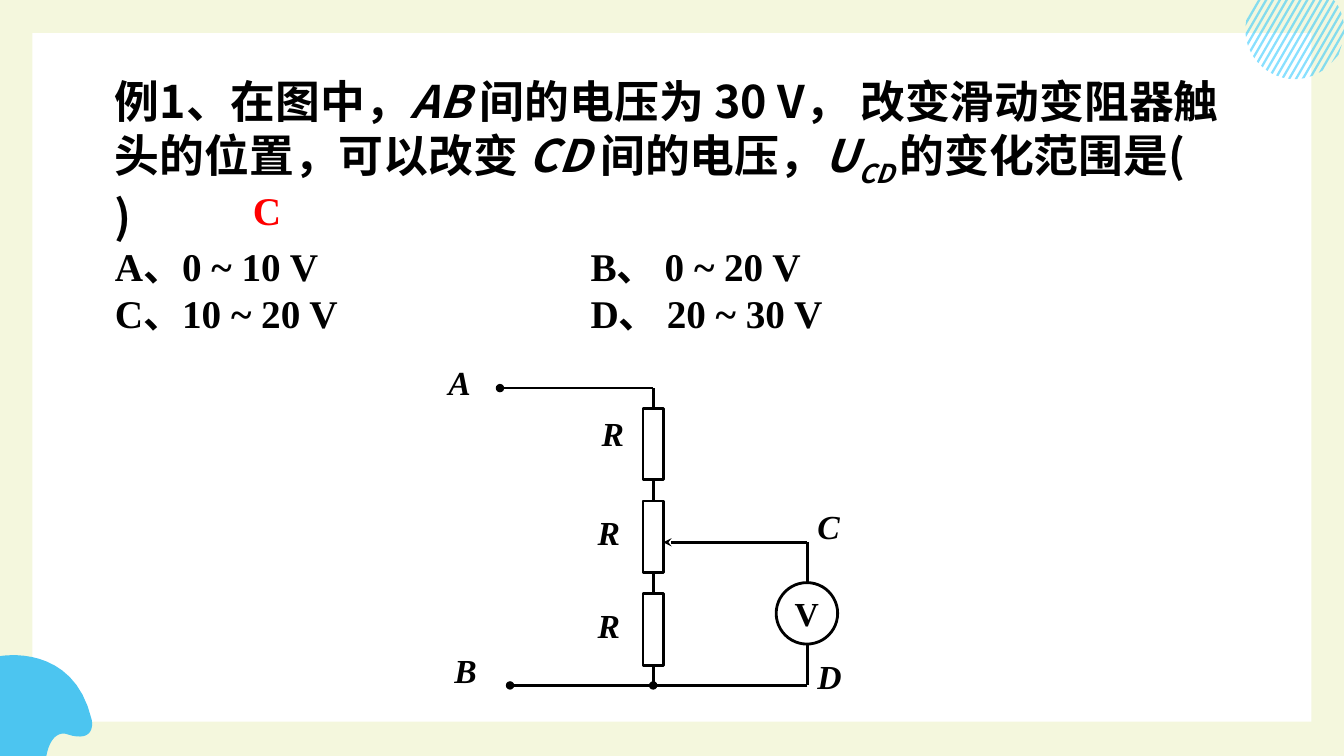
import math

import lxml.etree
import pptx
import pptx.dml.color
import pptx.enum.shapes
import pptx.enum.text
import pptx.oxml
import pptx.oxml.ns
import pptx.util

CREAM = pptx.dml.color.RGBColor(0xF4, 0xF7, 0xDD)
WHITE = pptx.dml.color.RGBColor(0xFF, 0xFF, 0xFF)
BLACK = pptx.dml.color.RGBColor(0x00, 0x00, 0x00)
RED = pptx.dml.color.RGBColor(0xFF, 0x00, 0x00)
SKY = pptx.dml.color.RGBColor(0x4C, 0xC5, 0xF0)
STRIPE_BLUE = pptx.dml.color.RGBColor(0x15, 0xC2, 0xFF)

CHINESE_FONT = "Noto Sans CJK SC"
LATIN_FONT = "Times New Roman"
CELL = pptx.util.Inches(0.1)
COLUMNS, ROWS = 133.33, 75
LINE_WIDTH = pptx.util.Pt(2)
SHAPE = pptx.enum.shapes.MSO_SHAPE

QUESTION = [
    ("例1、在图中，", ""), ("AB ", "italic"),
    ("间的电压为 30 V， 改变滑动变阻器触头的位置，可以改变 ", ""), ("CD ", "italic"),
    ("间的电压，", ""), ("U", "italic"), ("CD ", "subscript"), ("的变化范围是(\t)", ""),
]
OPTIONS = ["A、0 ~ 10 V\tB、 0 ~ 20 V", "C、10 ~ 20 V\tD、 20 ~ 30 V"]
LABELS = [
    ("A", 43.5, 35.4), ("B", 44.1, 64), ("C", 80.1, 49.7), ("D", 80.1, 64.6),
    ("R", 58.7, 40.5), ("R", 58.3, 50.3), ("R", 58.3, 59.5),
]
BLOB_CURVES = [
    [(0, 65.1), (0, 65.1), (7.3, 63.7), (9.1, 71.4)],
    [(9.1, 71.4), (9.1, 71.4), (9.6, 73.5), (7.2, 73)],
    [(7.2, 73), (6.5, 72.8), (6.5, 72.8), (6.5, 72.8)],
    [(6.5, 72.8), (6.5, 72.8), (5.1, 72.4), (4.6, 75)],
]


def grid(*cells):
    return [round(cell * CELL) for cell in cells]


def paint(shape, fill, outline=None):
    shape.shadow.inherit = False
    shape.fill.solid()
    shape.fill.fore_color.rgb = fill
    if outline is None:
        shape.line.fill.background()
    else:
        shape.line.color.rgb = outline
        shape.line.width = LINE_WIDTH


def add_block(shapes, kind, place, outline=None):
    shape = shapes.add_shape(kind, *grid(*place))
    paint(shape, WHITE, outline)
    return shape


def add_outline(shapes, points, fill):
    corners = [grid(*point) for point in points]
    builder = shapes.build_freeform(*corners[0])
    builder.add_line_segments(corners[1:], close=True)
    shape = builder.convert_to_shape()
    paint(shape, fill)
    return shape


def curve_points(curve, steps=16):
    weights = (1, 3, 3, 1)
    return [
        tuple(
            sum(weights[k] * (1 - t) ** (3 - k) * t ** k * curve[k][axis] for k in range(4))
            for axis in (0, 1)
        )
        for t in (step / steps for step in range(steps + 1))
    ]


def chord(top_column):
    center_column, center_row, radius = 128.45, 2.95, 4.9
    slant = math.radians(30)
    cosine, sine = math.cos(slant), math.sin(slant)
    offset = (top_column - center_column) * cosine - center_row * sine
    half = math.sqrt(max(0, radius ** 2 - offset ** 2))
    column, row = center_column + offset * cosine, center_row + offset * sine
    upper = (column + half * sine, row - half * cosine)
    lower = (column - half * sine, row + half * cosine)
    return (upper if upper[1] > 0 else (top_column, 0)), lower


def add_striped_disc(slide):
    group = slide.shapes.add_group_shape()
    for index in range(17):
        left = 124.8 + 0.68 * index
        left_top, left_bottom = chord(left)
        right_top, right_bottom = chord(left + 0.26)
        stripe = add_outline(
            group.shapes, [left_top, right_top, right_bottom, left_bottom], STRIPE_BLUE
        )
        color = stripe.fill._xPr.find(".//" + pptx.oxml.ns.qn("a:srgbClr"))
        lxml.etree.SubElement(color, pptx.oxml.ns.qn("a:alpha"), val="50000")


def add_wire(shapes, start, end, **line_ends):
    wire = shapes.add_connector(
        pptx.enum.shapes.MSO_CONNECTOR.STRAIGHT, *grid(*start, *end)
    )
    wire.line.color.rgb = BLACK
    wire.line.width = LINE_WIDTH
    line = wire.line._get_or_add_ln()
    for tag, kind in line_ends.items():
        lxml.etree.SubElement(line, pptx.oxml.ns.qn("a:" + tag), type=kind)
    lxml.etree.SubElement(wire._element.spPr, pptx.oxml.ns.qn("a:effectLst"))


def style_paragraph(paragraph, size, name=LATIN_FONT, color=BLACK, italic=None):
    font = paragraph.font
    font.size = pptx.util.Pt(size)
    font.bold = True
    font.italic = italic
    font.color.rgb = color
    font.name = name
    lxml.etree.SubElement(font._element, pptx.oxml.ns.qn("a:ea"), typeface=CHINESE_FONT)


def add_tab_stop(paragraph, cells):
    properties = paragraph._p.get_or_add_pPr()
    tabs = lxml.etree.Element(pptx.oxml.ns.qn("a:tabLst"))
    lxml.etree.SubElement(
        tabs, pptx.oxml.ns.qn("a:tab"), pos=str(grid(cells)[0]), algn="l"
    )
    properties.insert(0, tabs)


def add_text_frame(shapes, place, wrap):
    frame = shapes.add_textbox(*grid(*place)).text_frame
    frame.word_wrap = wrap
    frame.auto_size = pptx.enum.text.MSO_AUTO_SIZE.SHAPE_TO_FIT_TEXT
    return frame


def add_label(shapes, text, place, size=24, color=BLACK, italic=True, wrap=False):
    paragraph = add_text_frame(shapes, place, wrap).paragraphs[0]
    paragraph.text = text
    style_paragraph(paragraph, size, color=color, italic=italic)


def add_question(slide):
    frame = add_text_frame(slide.shapes, (10.4, 6.8, 112.5, 26.6), True)
    paragraph = frame.paragraphs[0]
    for text, role in QUESTION:
        run = paragraph.add_run()
        run.text = text
        run.font.italic = bool(role)
        if role == "subscript":
            run._r.get_or_add_rPr().set("baseline", "-25000")
    style_paragraph(paragraph, 32, CHINESE_FONT)
    add_tab_stop(paragraph, 19.5)
    for text in OPTIONS:
        paragraph = frame.add_paragraph()
        paragraph.add_run().text = text
        style_paragraph(paragraph, 28)
        add_tab_stop(paragraph, 47.2)


def add_circuit(slide):
    shapes = slide.shapes.add_group_shape().shapes
    main_column, meter_column = 64.8, 80.1
    top_row, slider_row, bottom_row = 38.5, 53.8, 68
    add_wire(shapes, (meter_column, slider_row), (65.8, slider_row), tailEnd="stealth")
    add_wire(shapes, (main_column, top_row), (main_column, bottom_row), tailEnd="oval")
    add_wire(shapes, (meter_column, slider_row), (meter_column, bottom_row))
    add_wire(shapes, (main_column, top_row), (49.6, top_row), tailEnd="oval")
    add_wire(shapes, (meter_column, bottom_row), (50.6, bottom_row), tailEnd="oval")
    for index in range(3):
        add_block(shapes, SHAPE.RECTANGLE, (63.8, 40.5 + 9.2 * index, 2, 7.1), BLACK)
    meter = add_block(shapes, SHAPE.OVAL, (77, 57.8, 6.1, 6.1), BLACK)
    frame = meter.text_frame
    frame.word_wrap = False
    frame.vertical_anchor = pptx.enum.text.MSO_ANCHOR.MIDDLE
    paragraph = frame.paragraphs[0]
    paragraph.text = "V"
    paragraph.alignment = pptx.enum.text.PP_ALIGN.CENTER
    style_paragraph(paragraph, 24)
    for text, column, row in LABELS:
        add_label(shapes, text, (column, row, 5.4, 6.5))


def main():
    presentation = pptx.Presentation()
    presentation.slide_width, presentation.slide_height = grid(COLUMNS, ROWS)
    slide = presentation.slides.add_slide(presentation.slide_layouts[6])
    slide.background.fill.solid()
    slide.background.fill.fore_color.rgb = CREAM
    add_block(slide.shapes, SHAPE.RECTANGLE, (3.2, 3.3, 126.9, 68.3))
    blob = [point for curve in BLOB_CURVES for point in curve_points(curve)]
    add_outline(slide.shapes, blob + [(0, ROWS)], SKY)
    add_striped_disc(slide)
    add_question(slide)
    add_label(slide.shapes, "C", (24.1, 18, 6.9, 5.7), 28, RED, None, True)
    add_circuit(slide)
    presentation.save("out.pptx")


if __name__ == "__main__":
    main()
